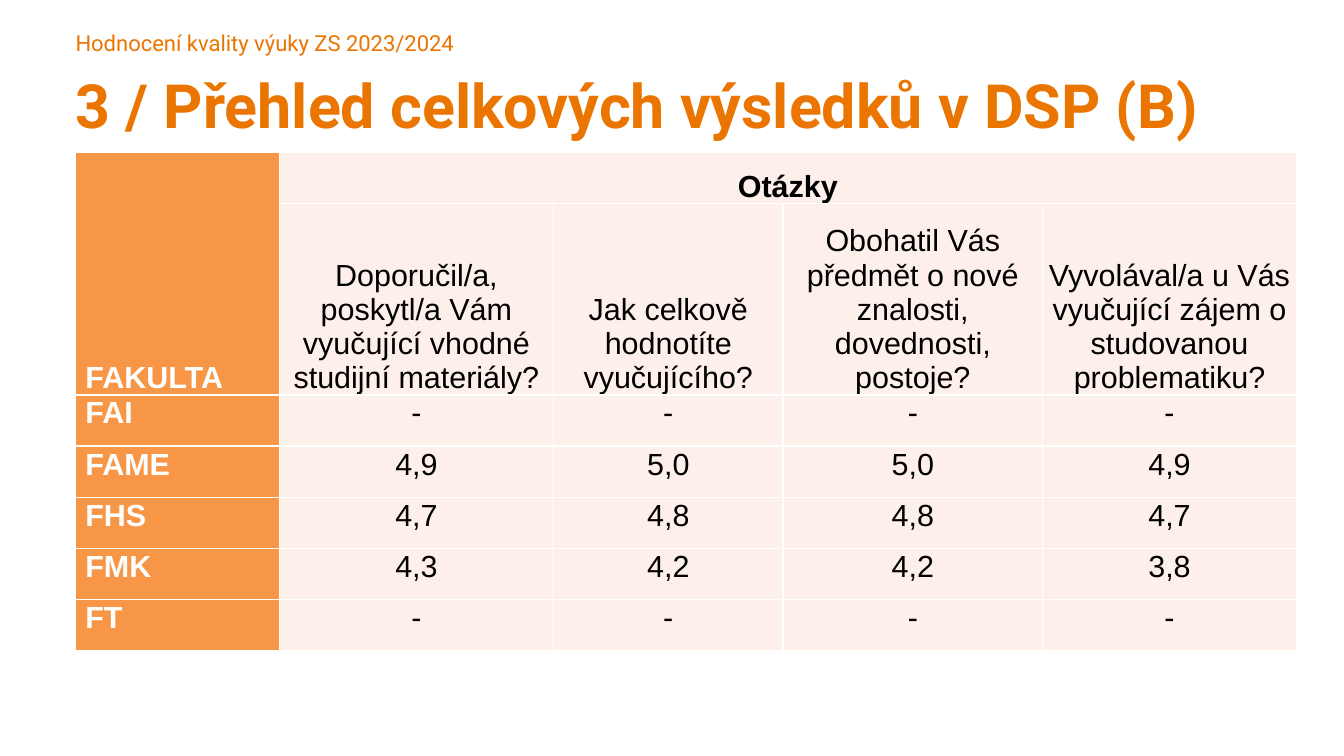
import pptx
import pptx.util
import pptx.dml.color
import pptx.enum.text
import pptx.oxml
import pptx.oxml.ns

COLORS = {"title": "EA7500", "faculty": "F79646", "cell": "FDEFE9",
          "white": "FFFFFF", "black": "000000"}
WIDTH, HEIGHT = 11.02, 6.2
COLUMNS = [1.67, 2.25, 1.88, 2.13, 2.08]
ROWS = [0.42, 1.57] + [0.42] * 5
QUESTIONS = [
    "Doporučil/a, poskytl/a Vám vyučující vhodné studijní materiály?",
    "Jak celkově hodnotíte vyučujícího?",
    "Obohatil Vás předmět o nové znalosti, dovednosti, postoje?",
    "Vyvolával/a u Vás vyučující zájem o studovanou problematiku?",
]
RESULTS = [
    ["FAI", "-", "-", "-", "-"],
    ["FAME", "4,9", "5,0", "5,0", "4,9"],
    ["FHS", "4,7", "4,8", "4,8", "4,7"],
    ["FMK", "4,3", "4,2", "4,2", "3,8"],
    ["FT", "-", "-", "-", "-"],
]
inch = pptx.util.Inches


def rgb(name):
    return pptx.dml.color.RGBColor.from_string(COLORS[name])


def write(tf, text, font, size, color, bold=False):
    tf.text = text
    for r in tf.paragraphs[0].runs:
        r.font.name = font
        r.font.size = pptx.util.Pt(size)
        r.font.bold = bold
        r.font.color.rgb = rgb(color)


def add_line(s, box, text, size, bold):
    tf = s.shapes.add_textbox(*map(inch, box)).text_frame
    tf.word_wrap = True
    tf.margin_left = tf.margin_right = tf.margin_top = tf.margin_bottom = 0
    write(tf, text, "Roboto", size, "title", bold)


def add_heading(s, box):
    left, top, width, height = box
    add_line(s, (left, top, width, 0.24 * height),
             "Hodnocení kvality výuky ZS 2023/2024", 13, False)
    add_line(s, (left, top + 0.34 * height, width, 0.66 * height),
             "3 / Přehled celkových výsledků v DSP (B)", 36, True)


def add_borders(cell):
    tcPr = cell._tc.get_or_add_tcPr()
    for side in "LRTB":
        tcPr.append(pptx.oxml.parse_xml(
            f'<a:ln{side} {pptx.oxml.ns.nsdecls("a")} w="12700"><a:solidFill>'
            f'<a:srgbClr val="{COLORS["white"]}"/></a:solidFill></a:ln{side}>'))


def fill_cell(cell, text, row, column):
    faculty = column == 0
    add_borders(cell)
    cell.fill.solid()
    cell.fill.fore_color.rgb = rgb("faculty" if faculty else "cell")
    cell.margin_left = inch(0.08 if faculty else 0.01)
    cell.margin_right = cell.margin_top = inch(0.01)
    cell.margin_bottom = 0
    anchor = pptx.enum.text.MSO_ANCHOR
    cell.vertical_anchor = anchor.BOTTOM if row < 2 else anchor.TOP
    write(cell.text_frame, text, "Arial", 18,
          "white" if faculty else "black", faculty or row == 0)
    if not faculty:
        cell.text_frame.paragraphs[0].alignment = pptx.enum.text.PP_ALIGN.CENTER


def add_results(s, box):
    left, top, width, height = box
    table = s.shapes.add_table(len(ROWS), len(COLUMNS), *map(inch, box)).table
    for column, share in zip(table.columns, COLUMNS):
        column.width = inch(width * share / sum(COLUMNS))
    for row, share in zip(table.rows, ROWS):
        row.height = inch(height * share / sum(ROWS))
    content = [["FAKULTA", "Otázky", "", "", ""], [""] + QUESTIONS] + RESULTS
    for i, texts in enumerate(content):
        for j, text in enumerate(texts):
            fill_cell(table.cell(i, j), text, i, j)
    table.cell(0, 0).merge(table.cell(1, 0))
    table.cell(0, 1).merge(table.cell(0, 4))


def main():
    prs = pptx.Presentation()
    prs.slide_width, prs.slide_height = inch(WIDTH), inch(HEIGHT)
    s = prs.slides.add_slide(prs.slide_layouts[6])
    add_heading(s, (0.62, 0.24, 0.9 * WIDTH, 0.92))
    add_results(s, (0.62, 1.25, sum(COLUMNS), sum(ROWS)))
    prs.save("out.pptx")


if __name__ == "__main__":
    main()
